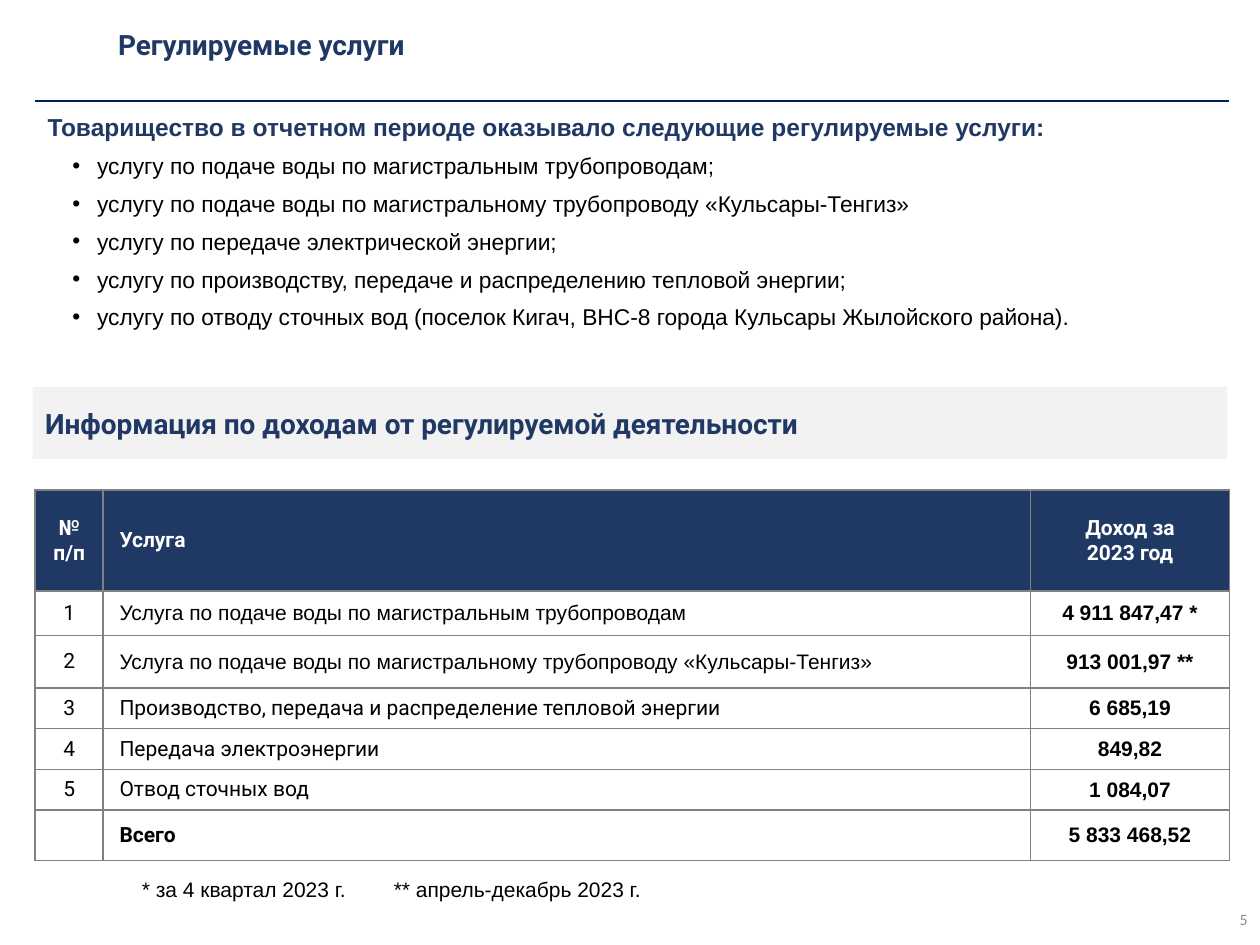
from lxml import etree
from pptx import Presentation, util as u
from pptx.dml.color import RGBColor
from pptx.enum import shapes, text
from pptx.oxml import ns

COLORS = {
    "navy": "203864", "rule": "002060", "band": "F2F2F2", "border": "808080",
    "page": "8C8C8C", "white": "FFFFFF", "black": "000000",
}
LEFT, CENTER = text.PP_ALIGN.LEFT, text.PP_ALIGN.CENTER
RIGHT, JUSTIFY = text.PP_ALIGN.RIGHT, text.PP_ALIGN.JUSTIFY
TOP, MIDDLE = text.MSO_ANCHOR.TOP, text.MSO_ANCHOR.MIDDLE


def color(name):
    return RGBColor.from_string(COLORS[name])


def add_element(parent, tag, **attributes):
    return etree.SubElement(parent, ns.qn(tag), attributes)


class SlideBuilder:
    heading_font = "Roboto"
    body_font = "Arial"

    def __init__(self, slide):
        self.slide = slide

    def style(self, paragraph, size, font=body_font, ink="black", bold=False, align=LEFT):
        paragraph.alignment = align
        paragraph.font.size = u.Pt(size)
        paragraph.font.name = font
        paragraph.font.bold = bold
        paragraph.font.color.rgb = color(ink)

    def text_box(self, box, content, size, anchor=TOP, **style):
        shape = self.slide.shapes.add_textbox(*map(u.Cm, box))
        frame = shape.text_frame
        frame.word_wrap = True
        frame.vertical_anchor = anchor
        paragraph = frame.paragraphs[0]
        paragraph.text = content
        self.style(paragraph, size, **style)
        return frame

    def bullet(self, frame, content, size):
        paragraph = frame.add_paragraph()
        paragraph.text = content
        paragraph.space_before = u.Pt(6)
        properties = paragraph._p.get_or_add_pPr()
        properties.set("marL", str(u.Cm(1)))
        properties.set("indent", str(-u.Cm(0.5)))
        add_element(properties, "a:buFont", typeface=self.body_font)
        add_element(properties, "a:buChar", char="•")
        self.style(paragraph, size, align=JUSTIFY)

    def footnote(self, box, notes, margin, tab):
        frame = self.text_box(box, "\t".join(notes), 12)
        properties = frame.paragraphs[0]._p.get_or_add_pPr()
        properties.set("marL", str(u.Cm(margin)))
        properties.set("indent", "0")
        tabs = etree.Element(ns.qn("a:tabLst"))
        add_element(tabs, "a:tab", pos=str(u.Cm(tab)), algn="l")
        properties.insert(0, tabs)

    def band(self, box, content):
        shape = self.slide.shapes.add_shape(shapes.MSO_SHAPE.RECTANGLE, *map(u.Cm, box))
        shape.shadow.inherit = False
        shape.fill.solid()
        shape.fill.fore_color.rgb = color("band")
        shape.line.fill.background()
        shape.text_frame.vertical_anchor = MIDDLE
        paragraph = shape.text_frame.paragraphs[0]
        paragraph.text = content
        self.style(paragraph, 16, self.heading_font, "navy", True)

    def rule(self, left, right, top):
        line = self.slide.shapes.add_connector(
            shapes.MSO_CONNECTOR.STRAIGHT, u.Cm(left), u.Cm(top), u.Cm(right), u.Cm(top))
        line.line.color.rgb = color("rule")
        line.line.width = u.Pt(1)
        add_element(line._element.spPr, "a:effectLst")

    def cell(self, cell, content, margin, fill=None, **style):
        cell.vertical_anchor = MIDDLE
        cell.margin_left = cell.margin_right = u.Cm(margin)
        cell.text = content
        for paragraph in cell.text_frame.paragraphs:
            self.style(paragraph, 12, **style)
        properties = cell._tc.get_or_add_tcPr()
        for side in ("a:lnL", "a:lnR", "a:lnT", "a:lnB"):
            border = add_element(properties, side, w=str(u.Pt(1)))
            solid = add_element(border, "a:solidFill")
            add_element(solid, "a:srgbClr", val=COLORS["border"])
        if fill:
            cell.fill.solid()
            cell.fill.fore_color.rgb = color(fill)
        else:
            cell.fill.background()

    def table(self, left, top, widths, heights, rows):
        table = self.slide.shapes.add_table(
            len(rows), len(widths), u.Cm(left), u.Cm(top),
            u.Cm(sum(widths)), u.Cm(sum(heights))).table
        table.horz_banding = False
        for column, width in zip(table.columns, widths):
            column.width = u.Cm(width)
        for row, height in zip(table.rows, heights):
            row.height = u.Cm(height)
        last = len(rows) - 1
        for i, values in enumerate(rows):
            for j, value in enumerate(values):
                header = i == 0
                # Income figures and the two water services use the body font
                plain = not header and (j == 2 or (j == 1 and i in (1, 2)))
                self.cell(
                    table.cell(i, j), value, 0.25 if j == 2 else 0.33,
                    fill="navy" if header else None,
                    font=self.body_font if plain else self.heading_font,
                    ink="white" if header else "black",
                    bold=header or i == last or j == 2,
                    align=LEFT if j == 1 else CENTER)


SERVICES = [
    "услугу по подаче воды по магистральным трубопроводам;",
    "услугу по подаче воды по магистральному трубопроводу «Кульсары-Тенгиз»",
    "услугу по передаче электрической энергии;",
    "услугу по производству, передаче и распределению тепловой энергии;",
    "услугу по отводу сточных вод (поселок Кигач, ВНС-8 города Кульсары Жылойского района).",
]
INCOME = [
    ("№ п/п", "Услуга", "Доход за\v2023 год"),
    ("1", "Услуга по подаче воды по магистральным трубопроводам", "4 911 847,47 *"),
    ("2", "Услуга по подаче воды по магистральному трубопроводу «Кульсары-Тенгиз»",
     "913 001,97 **"),
    ("3", "Производство, передача и распределение тепловой энергии", "6 685,19"),
    ("4", "Передача электроэнергии", "849,82"),
    ("5", "Отвод сточных вод", "1 084,07"),
    ("", "Всего", "5 833 468,52"),
]


def main():
    presentation = Presentation()
    presentation.slide_width, presentation.slide_height = u.Cm(25.4), u.Cm(19.05)
    slide = presentation.slides.add_slide(presentation.slide_layouts[6])
    builder = SlideBuilder(slide)

    # Title and rule
    builder.text_box((2.13, 0.36, 22.68, 1.07), "Регулируемые услуги", 16, MIDDLE,
                     font=builder.heading_font, ink="navy", bold=True)
    builder.rule(0.71, 24.77, 2.03)

    # List of services
    frame = builder.text_box(
        (0.71, 2.13, 24.08, 4.7),
        "Товарищество в отчетном периоде оказывало следующие регулируемые услуги:",
        14, ink="navy", bold=True, align=JUSTIFY)
    for service in SERVICES:
        builder.bullet(frame, service, 13)

    # Income section
    builder.band((0.66, 7.8, 24.08, 1.45), "Информация по доходам от регулируемой деятельности")
    builder.table(0.71, 9.88, (1.37, 18.69, 4.02),
                  (2.03, 0.9, 1.06, 0.82, 0.82, 0.82, 1.02), INCOME)

    # Footnotes and page number
    builder.footnote((2.13, 17.55, 12.7, 0.76),
                     ("* за 4 квартал 2023 г.", "** апрель-декабрь 2023 г."), 0.48, 5.2)
    builder.text_box((19.69, 18.03, 5.71, 1.02), "5", 9, MIDDLE,
                     font="Calibri", ink="page", align=RIGHT)

    presentation.save("out.pptx")


if __name__ == "__main__":
    main()
